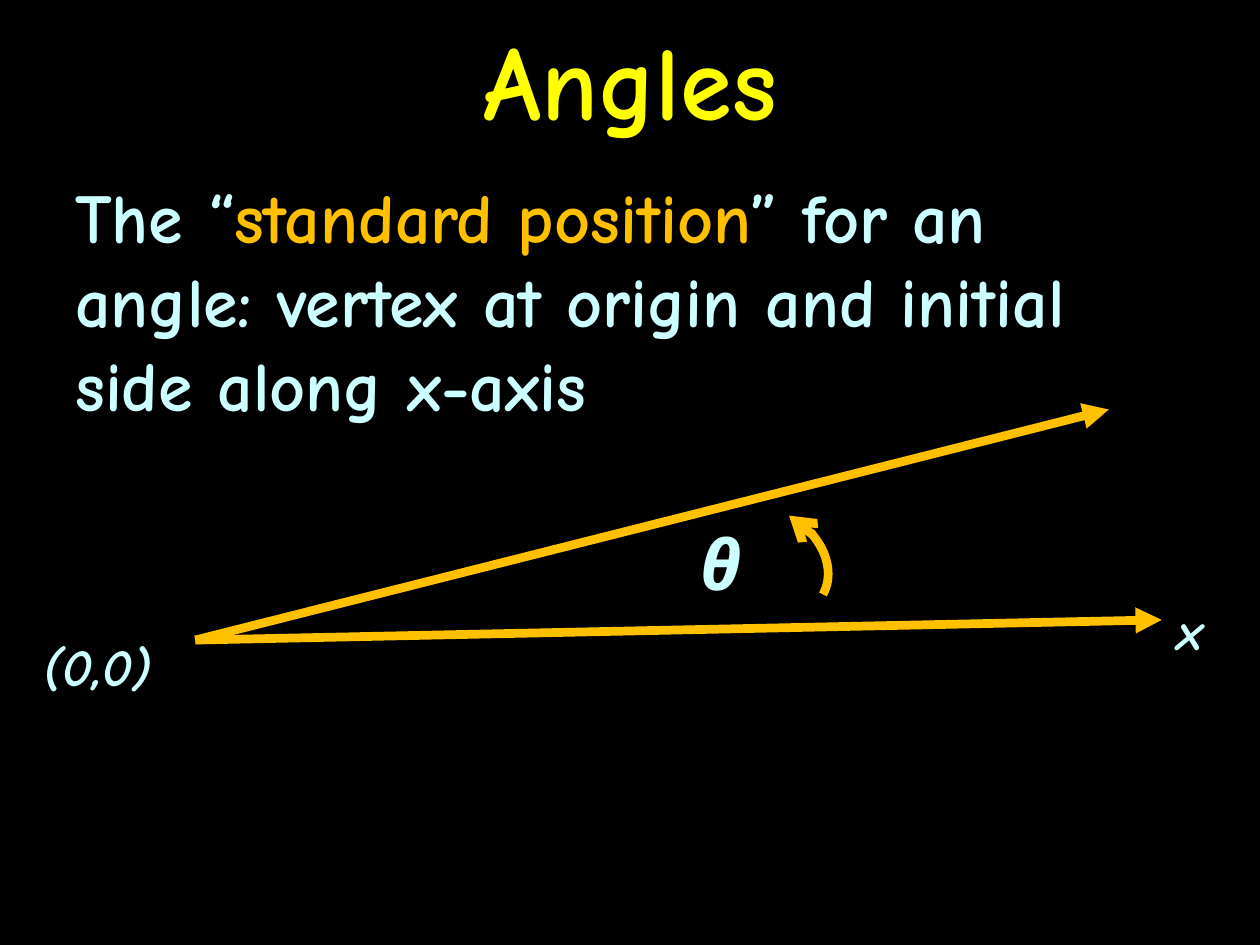
from lxml.etree import SubElement
from pptx import Presentation
from pptx.dml.color import RGBColor
from pptx.enum.shapes import MSO_CONNECTOR, MSO_SHAPE
from pptx.enum.text import MSO_ANCHOR, PP_ALIGN
from pptx.oxml.ns import qn
from pptx.util import Inches, Pt

BLACK = RGBColor(0x00, 0x00, 0x00)
YELLOW = RGBColor(0xFF, 0xFF, 0x00)
PALE_CYAN = RGBColor(0xCC, 0xFF, 0xFF)
ORANGE = RGBColor(0xFF, 0xC0, 0x00)


class AngleSlide:
    """Draws text, rays and arcs on one slide in a shared style."""

    font_format = {"name": "Comic Neue", "bold": True}

    def __init__(self, presentation):
        self.slide = presentation.slides.add_slide(presentation.slide_layouts[6])
        fill = self.slide.background.fill
        fill.solid()
        fill.fore_color.rgb = BLACK

    def text(self, box, runs, size, italic=False, anchor=MSO_ANCHOR.TOP, **paragraph_format):
        shape = self.slide.shapes.add_textbox(*map(Inches, box))
        frame = shape.text_frame
        frame.word_wrap = True
        frame.vertical_anchor = anchor
        paragraph = frame.paragraphs[0]
        for name, value in paragraph_format.items():
            setattr(paragraph, name, value)
        font_format = {**self.font_format, "size": Pt(size), "italic": italic}
        for content, color in runs:
            run = paragraph.add_run()
            run.text = content
            for name, value in font_format.items():
                setattr(run.font, name, value)
            run.font.color.rgb = color

    def stroke(self, shape, end, arrowhead):
        shape.line.color.rgb = ORANGE
        shape.line.width = Pt(5)
        line = shape.line._get_or_add_ln()
        SubElement(line, qn(f"a:{end}"), type=arrowhead)

    def ray(self, start, end):
        connector = self.slide.shapes.add_connector(
            MSO_CONNECTOR.STRAIGHT, *map(Inches, start + end))
        self.stroke(connector, "tailEnd", "triangle")
        SubElement(connector._element.spPr, qn("a:effectLst"))

    def arc(self, box, rotation):
        shape = self.slide.shapes.add_shape(MSO_SHAPE.ARC, *map(Inches, box))
        shape.rotation = rotation
        shape.fill.background()
        self.stroke(shape, "headEnd", "arrow")
        shape.shadow.inherit = False


def main():
    presentation = Presentation()
    presentation.slide_width = Inches(10)
    presentation.slide_height = Inches(7.5)
    slide = AngleSlide(presentation)

    slide.text((0, 0, 10, 1.25), [("Angles", YELLOW)], 60,
               anchor=MSO_ANCHOR.MIDDLE, alignment=PP_ALIGN.CENTER)
    definition = [
        ("The “", PALE_CYAN),
        ("standard position", ORANGE),
        ("” for an angle: vertex at origin and initial side along x-axis", PALE_CYAN),
    ]
    slide.text((0.5, 1.33, 9, 6.17), definition, 40, space_before=Pt(8))

    vertex = (1.55, 5.08)
    for ray_end in ((9.22, 4.92), (8.8, 3.25)):
        slide.ray(vertex, ray_end)
    slide.arc((5.52, 4.04, 1.08, 0.83), 29.2)

    labels = [
        ("(0,0)", (0.25, 4.98, 1.72, 0.61), 30),
        ("x", (9.25, 4.7, 0.45, 0.61), 30),
        ("θ", (5.46, 4.08, 0.54, 0.77), 40),
    ]
    for content, box, size in labels:
        slide.text(box, [(content, PALE_CYAN)], size, italic=True)

    presentation.save("out.pptx")


if __name__ == "__main__":
    main()
